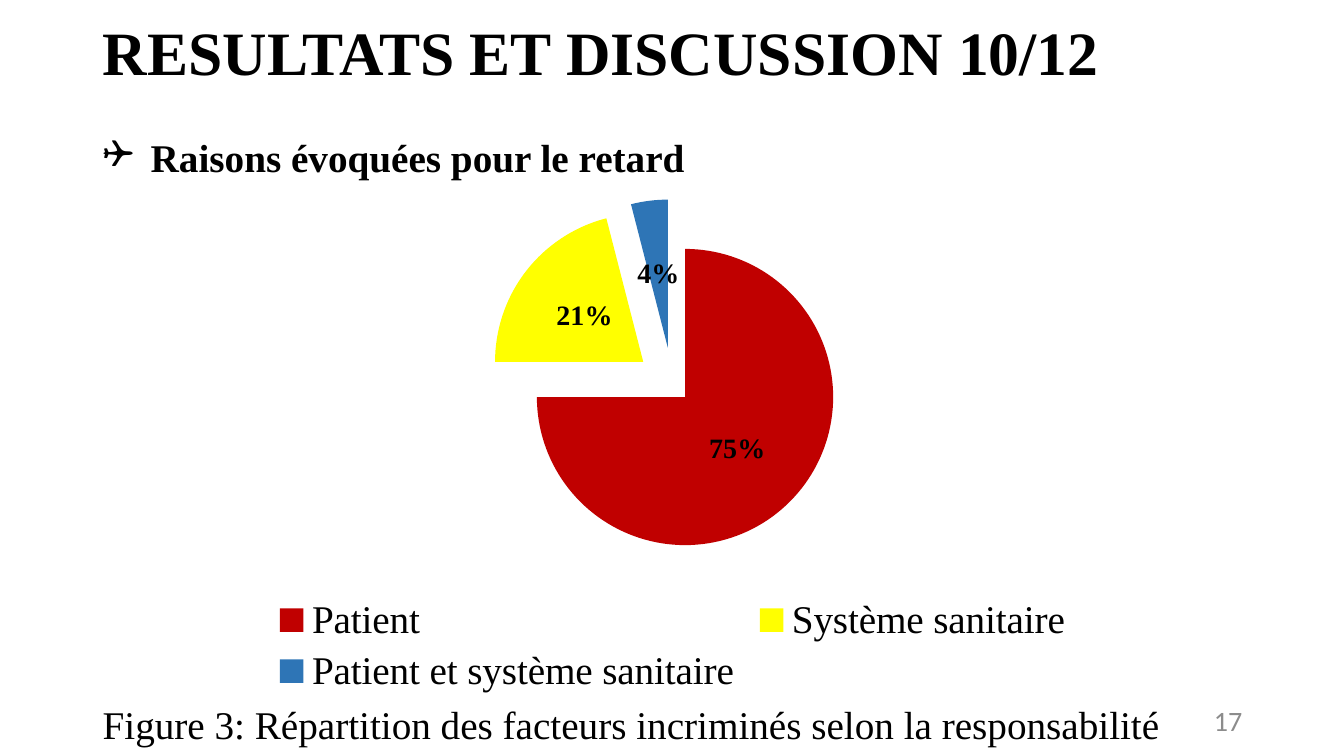
from lxml import etree
from pptx import Presentation
from pptx.chart.data import CategoryChartData
from pptx.dml.color import RGBColor
from pptx.enum.chart import XL_CHART_TYPE, XL_LABEL_POSITION, XL_LEGEND_POSITION
from pptx.enum.text import MSO_ANCHOR, MSO_AUTO_SIZE, PP_ALIGN
from pptx.oxml.ns import qn
from pptx.util import Inches, Pt

PIE = XL_CHART_TYPE.PIE
LABEL_CENTER = XL_LABEL_POSITION.CENTER
LEGEND_BOTTOM = XL_LEGEND_POSITION.BOTTOM
TOP, MIDDLE, BOTTOM = MSO_ANCHOR.TOP, MSO_ANCHOR.MIDDLE, MSO_ANCHOR.BOTTOM
LEFT, RIGHT = PP_ALIGN.LEFT, PP_ALIGN.RIGHT
NO_AUTOFIT = MSO_AUTO_SIZE.NONE

SERIF = "Times New Roman"
BLACK = "000000"
MARGIN, WIDTH = 0.92, 11.5
RESPONSIBILITY = [
    ("Patient", 75, "C00000"),
    ("Système sanitaire", 21, "FFFF00"),
    ("Patient et système sanitaire", 4, "2E75B6"),
]


def rgb(color):
    return RGBColor.from_string(color)


def set_font(font, size, bold=False, name=SERIF, color=BLACK):
    font.name, font.size, font.bold = name, Pt(size), bold
    font.color.rgb = rgb(color)


def fill_text(sp, text, anchor, align=LEFT, spacing=0.9, before=0):
    """Write one paragraph into a shape and return it."""
    tf = sp.text_frame
    tf.word_wrap, tf.auto_size, tf.vertical_anchor = True, NO_AUTOFIT, anchor
    p = tf.paragraphs[0]
    p.text, p.alignment = text, align
    p.line_spacing, p.space_before = spacing, Pt(before)
    return p


def add_text(s, box, *args, **kwargs):
    return fill_text(s.shapes.add_textbox(*map(Inches, box)), *args, **kwargs)


def add_title(s, box, text):
    sp = s.shapes.title
    sp.left, sp.top, sp.width, sp.height = map(Inches, box)
    set_font(fill_text(sp, text, MIDDLE).font, 44, bold=True)


def add_heading(s, box, text):
    p = add_text(s, box, text, BOTTOM, before=10)
    set_font(p.font, 28, bold=True)
    # Hanging square bullet
    pPr = p._p.get_or_add_pPr()
    pPr.set("marL", str(Inches(0.38)))
    pPr.set("indent", str(-Inches(0.38)))
    bullet_font = etree.Element(qn("a:buFont"), typeface="Wingdings", charset="2")
    pPr.find(qn("a:spcBef")).addnext(bullet_font)
    bullet_font.addnext(etree.Element(qn("a:buChar"), char="❑"))


def explode_after(element, percent):
    element.addnext(etree.Element(qn("c:explosion"), val=str(percent)))


def add_pie(s, box, rows):
    data = CategoryChartData()
    data.categories = [name for name, _, _ in rows]
    data.add_series("Series 1", [value for _, value, _ in rows])
    chart = s.shapes.add_chart(PIE, *map(Inches, box), data).chart
    chart.has_title = False
    set_font(chart.font, 10, name="Calibri")

    # Slices, pulled out by a quarter of the radius, the largest one by less
    series = chart.plots[0].series[0]
    for i, (_, _, color) in enumerate(rows):
        fill = series.points[i].format.fill
        fill.solid()
        fill.fore_color.rgb = rgb(color)
    ser = series._element
    explode_after(ser.find(qn("c:tx")), 25)
    explode_after(ser.find(qn("c:dPt")).find(qn("c:idx")), 12)

    # Percentages
    labels = series.data_labels
    labels.show_percentage, labels.show_value = True, False
    labels.number_format, labels.number_format_is_linked = "0%", False
    labels.position = LABEL_CENTER
    set_font(labels.font, 20, bold=True)

    # Legend
    chart.has_legend = True
    chart.legend.position = LEGEND_BOTTOM
    chart.legend.include_in_layout = False
    set_font(chart.legend.font, 28)


def add_footer(s, box, caption, number):
    left, top, width, height = box
    p = add_text(s, box, caption, TOP, before=10)
    set_font(p.font, 28)
    # Slide number, flush with the right edge
    number_box = (left + width - 3, top, 3, 0.4)
    p = add_text(s, number_box, number, MIDDLE, align=RIGHT, spacing=1)
    set_font(p.font, 20, name="Calibri", color="8C8C8C")


def main():
    prs = Presentation()
    prs.slide_width, prs.slide_height = Inches(13.33), Inches(7.5)
    s = prs.slides.add_slide(prs.slide_layouts[5])
    add_title(s, (MARGIN, 0, WIDTH, 1.1), "RESULTATS ET DISCUSSION 10/12")
    add_heading(s, (MARGIN, 0.94, 6.66, 0.9), " Raisons évoquées pour le retard")
    add_pie(s, (MARGIN, 1.84, WIDTH, 5.11), RESPONSIBILITY)
    add_footer(s, (MARGIN, 6.95, WIDTH, 0.55),
               "Figure 3: Répartition des facteurs incriminés selon la responsabilité", "17")
    prs.save("out.pptx")


if __name__ == "__main__":
    main()
